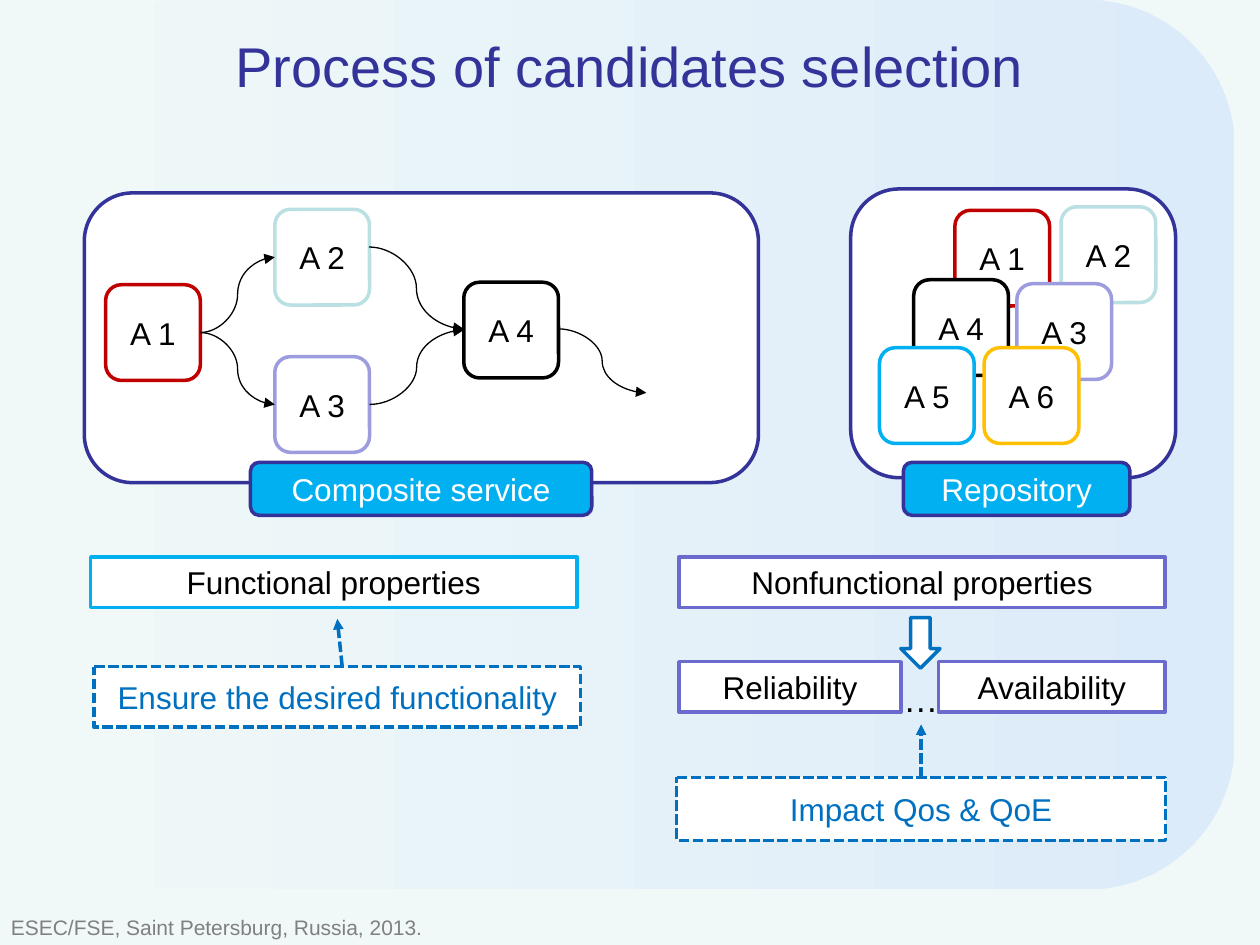
from lxml import etree
from pptx import Presentation
from pptx.dml.color import RGBColor
from pptx.enum.dml import MSO_LINE
from pptx.enum.shapes import MSO_CONNECTOR, MSO_SHAPE
from pptx.enum.text import MSO_ANCHOR, PP_ALIGN
from pptx.oxml.ns import qn
from pptx.util import Cm, Pt

ROUND = MSO_SHAPE.ROUNDED_RECTANGLE
RECTANGLE = MSO_SHAPE.RECTANGLE
CALLOUT = MSO_SHAPE.LINE_CALLOUT_1
DOWN_ARROW = MSO_SHAPE.DOWN_ARROW
CURVE = MSO_CONNECTOR.CURVE
DASH = MSO_LINE.SQUARE_DOT
MIDDLE, TOP = MSO_ANCHOR.MIDDLE, MSO_ANCHOR.TOP
CENTER, LEFT = PP_ALIGN.CENTER, PP_ALIGN.LEFT
RIGHT_SITE, LEFT_SITE = 3, 1

BACKGROUND = RGBColor(0xF0, 0xF8, 0xF8)
PALE_BLUE = RGBColor(0xDC, 0xEB, 0xFA)
WHITE = RGBColor(0xFF, 0xFF, 0xFF)
BLACK = RGBColor(0x00, 0x00, 0x00)
GRAY = RGBColor(0x80, 0x80, 0x80)
NAVY = RGBColor(0x33, 0x33, 0x99)
SKY = RGBColor(0x00, 0xB0, 0xF0)
BLUE = RGBColor(0x00, 0x70, 0xC0)
VIOLET = RGBColor(0x6B, 0x6B, 0xCF)
TEAL = RGBColor(0xBB, 0xE0, 0xE3)
RED = RGBColor(0xC0, 0x00, 0x00)
LILAC = RGBColor(0x9C, 0x9C, 0xDF)
GOLD = RGBColor(0xFF, 0xC0, 0x00)

ACTIVITY_COLORS = {"A 1": RED, "A 2": TEAL, "A 3": LILAC,
                   "A 4": BLACK, "A 5": SKY, "A 6": GOLD}
ACTIVITY_SIZE = (1.91, 1.93)
PROCESS = {"A 2": (5.54, 4.22), "A 1": (2.13, 5.74),
           "A 3": (5.54, 7.19), "A 4": (9.35, 5.69)}
CANDIDATES = {"A 2": (21.39, 4.17), "A 1": (19.25, 4.24),
              "A 3": (20.5, 5.72), "A 4": (18.42, 5.64),
              "A 5": (17.73, 7.01), "A 6": (19.84, 7.01)}
FLOWS = [("A 1", "A 2"), ("A 1", "A 3"), ("A 3", "A 4")]
LOOSE_FLOWS = [((7.44, 4.98), (9.35, 6.63)), ((11.25, 6.63), (13.03, 7.92))]
PROPERTIES = [("Functional properties", (1.83, 11.23, 9.8, 1.02), SKY),
              ("Nonfunctional properties", (13.69, 11.23, 9.8, 1.02), VIOLET),
              ("Reliability", (13.69, 13.34, 4.47, 1.02), VIOLET),
              ("Availability", (18.92, 13.34, 4.57, 1.02), VIOLET)]


def lengths(values):
    return [Cm(value) for value in values]


def write(box, text, color, size=18, align=CENTER):
    para = box.text_frame.paragraphs[0]
    para.alignment = align
    span = para.add_run()
    span.text = text
    values = {"name": "Arial", "size": Pt(size)}
    for name, value in values.items():
        setattr(span.font, name, value)
    span.font.color.rgb = color


def add_text(page, text, place, color, size, align=LEFT, anchor=TOP, wrap=True):
    box = page.shapes.add_textbox(*lengths(place))
    box.text_frame.word_wrap = wrap
    box.text_frame.vertical_anchor = anchor
    write(box, text, color, size, align)


def add_box(page, kind, place, line, text="", fill=WHITE, color=BLACK):
    box = page.shapes.add_shape(kind, *lengths(place))
    box.shadow.inherit = False
    box.fill.solid()
    box.fill.fore_color.rgb = fill
    box.line.color.rgb = line
    box.line.width = Pt(2)
    if text:
        frame = {"margin_left": 0, "margin_right": 0, "margin_top": 0,
                 "margin_bottom": 0, "vertical_anchor": MIDDLE,
                 "word_wrap": True}
        for name, value in frame.items():
            setattr(box.text_frame, name, value)
        write(box, text, color)
    return box


def add_backdrop(page):
    """Paint the page and the rounded panel that fades to pale blue."""
    page.background.fill.solid()
    page.background.fill.fore_color.rgb = BACKGROUND
    panel = page.shapes.add_shape(ROUND, *lengths((0.69, 0, 24.2, 17.93)))
    panel.shadow.inherit = False
    panel.line.fill.background()
    panel.fill.gradient()
    panel.fill.gradient_angle = 0
    stops = zip(panel.fill.gradient_stops, (0, 1), (BACKGROUND, PALE_BLUE))
    for stop, position, color in stops:
        stop.position = position
        stop.color.rgb = color


def add_activities(page, places):
    return {name: add_box(page, ROUND, place + ACTIVITY_SIZE,
                          ACTIVITY_COLORS[name], name)
            for name, place in places.items()}


def add_arrowhead(shape):
    line = shape.element.spPr.find(qn("a:ln"))
    etree.SubElement(line, qn("a:tailEnd")).set("type", "triangle")


def add_flow(page, begin=(0, 0), end=(0, 0)):
    flow = page.shapes.add_connector(CURVE, *lengths(begin + end))
    flow.line.color.rgb = BLACK
    flow.line.width = Pt(0.75)
    add_arrowhead(flow)
    etree.SubElement(flow.element.spPr, qn("a:effectLst"))
    return flow


def add_callout(page, text, place, adjustments):
    """Add a dashed note whose leader points up to what it explains."""
    note = add_box(page, CALLOUT, place, BLUE, text, color=BLUE)
    for index, value in enumerate(adjustments):
        note.adjustments[index] = value
    note.line.dash_style = DASH
    add_arrowhead(note)


def add_label(page, text, place):
    add_box(page, ROUND, place, NAVY, text, SKY, WHITE)


def add_composite_service(page):
    add_box(page, ROUND, (1.7, 3.89, 13.59, 5.84), NAVY)
    activities = add_activities(page, PROCESS)
    for source, target in FLOWS:
        flow = add_flow(page)
        flow.begin_connect(activities[source], RIGHT_SITE)
        flow.end_connect(activities[target], LEFT_SITE)
    for begin, end in LOOSE_FLOWS:
        add_flow(page, begin, end)
    add_label(page, "Composite service", (5.05, 9.32, 6.88, 1.07))


def add_repository(page):
    add_box(page, ROUND, (17.15, 3.81, 6.55, 5.82), NAVY)
    add_activities(page, CANDIDATES)
    add_label(page, "Repository", (18.21, 9.32, 4.57, 1.07))


def add_properties(page):
    add_box(page, DOWN_ARROW, (18.16, 12.45, 0.79, 1.02), BLUE)
    for text, place, line in PROPERTIES:
        add_box(page, RECTANGLE, place, line, text)
    add_text(page, "…", (17.96, 13.54, 1.22, 1.12), BLACK, 20, wrap=False)
    add_callout(page, "Ensure the desired functionality",
                (1.9, 13.44, 9.8, 1.22), (-0.01, 0.51, -0.79, 0.5))
    add_callout(page, "Impact Qos & QoE",
                (13.64, 15.67, 9.86, 1.27), (0.01, 0.5, -0.84, 0.5))


def main():
    deck = Presentation()
    deck.slide_width, deck.slide_height = Cm(25.4), Cm(19.05)
    page = deck.slides.add_slide(deck.slide_layouts[6])
    add_backdrop(page)
    add_text(page, "Process of candidates selection", (1.98, 0, 21.44, 2.62),
             NAVY, 32, CENTER, MIDDLE)
    add_composite_service(page)
    add_repository(page)
    add_properties(page)
    add_text(page, "ESEC/FSE, Saint Petersburg, Russia, 2013.",
             (-0.03, 18.31, 10.19, 0.74), GRAY, 12)
    deck.save("out.pptx")


if __name__ == "__main__":
    main()
